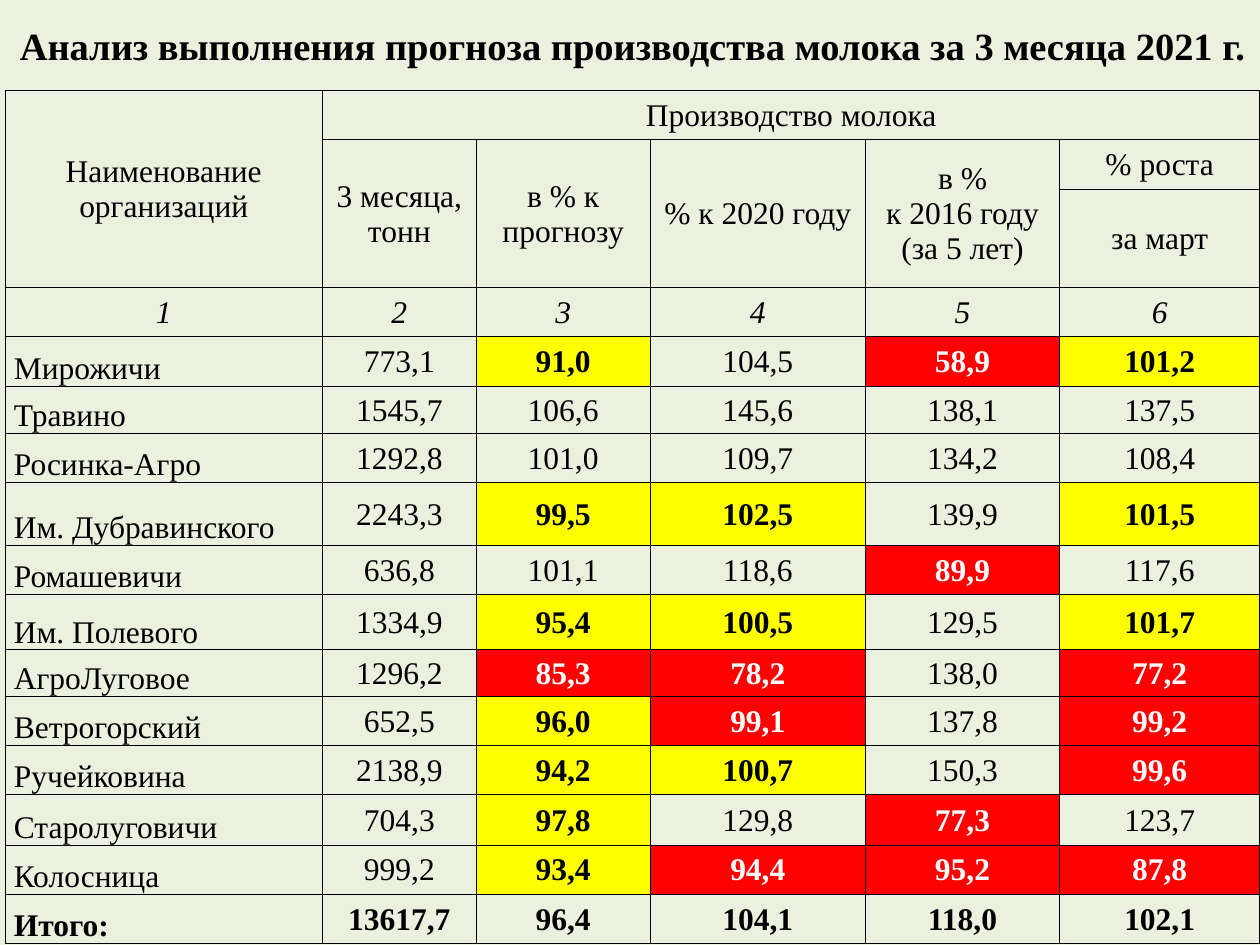
"""Build a slide with the milk production table for the first three months of 2021."""
from lxml import etree
from pptx import Presentation, util as u
from pptx.dml.color import RGBColor
from pptx.enum import text
from pptx.oxml.ns import qn

BASE, YELLOW, RED, BLACK, WHITE = "EBF1DE", "FFFF00", "FF0000", "000000", "FFFFFF"


def color(hex_value):
    return RGBColor.from_string(hex_value)


def draw_borders(cell, drawn_sides):
    properties = cell._tc.get_or_add_tcPr()
    for position, side in enumerate("LRTB"):
        line = etree.Element(qn(f"a:ln{side}"), w=str(u.Pt(0.5)))
        if side in drawn_sides:
            paint = etree.SubElement(line, qn("a:solidFill"))
            etree.SubElement(paint, qn("a:srgbClr"), val=BLACK)
        else:
            etree.SubElement(line, qn("a:noFill"))
        properties.insert(position, line)


title = "Анализ выполнения прогноза производства молока за 3 месяца 2021 г."
headings = [
    [title, "", "", "", "", ""],
    ["Наименование организаций", "Производство молока", "", "", "", ""],
    ["", "3 месяца, тонн", "в % к прогнозу", "% к 2020 году",
     "в %\nк 2016 году\n(за 5 лет)", "% роста"],
    ["", "", "", "", "", "за март"],
    ["1", "2", "3", "4", "5", "6"],
]
farms = [
    ["Мирожичи", "773,1", "91,0", "104,5", "58,9", "101,2"],
    ["Травино", "1545,7", "106,6", "145,6", "138,1", "137,5"],
    ["Росинка-Агро", "1292,8", "101,0", "109,7", "134,2", "108,4"],
    ["Им. Дубравинского", "2243,3", "99,5", "102,5", "139,9", "101,5"],
    ["Ромашевичи", "636,8", "101,1", "118,6", "89,9", "117,6"],
    ["Им. Полевого", "1334,9", "95,4", "100,5", "129,5", "101,7"],
    ["АгроЛуговое", "1296,2", "85,3", "78,2", "138,0", "77,2"],
    ["Ветрогорский", "652,5", "96,0", "99,1", "137,8", "99,2"],
    ["Ручейковина", "2138,9", "94,2", "100,7", "150,3", "99,6"],
    ["Старолуговичи", "704,3", "97,8", "129,8", "77,3", "123,7"],
    ["Колосница", "999,2", "93,4", "94,4", "95,2", "87,8"],
]
totals = ["Итого:", "13617,7", "96,4", "104,1", "118,0", "102,1"]
rows = headings + farms + [totals]
number_row, first_farm, total_row = len(headings) - 1, len(headings), len(rows) - 1

column_widths = [2.52, 1.22, 1.38, 1.71, 1.54, 1.59]
row_heights = [0.72, 0.39, 0.39, 0.78, 0.39, 0.4, 0.37, 0.39, 0.5,
               0.39, 0.44, 0.37, 0.39, 0.39, 0.4, 0.39, 0.39]
merges = [(0, 0, 0, 5), (1, 0, 3, 0), (1, 1, 1, 5)]
merges += [(2, column, 3, column) for column in range(1, 5)]
limits = {2: (90, 100), 3: (100, 103), 4: (100, 100), 5: (100, 103)}

deck = Presentation()
deck.slide_width, deck.slide_height = u.Inches(10), u.Inches(7.5)
slide = deck.slides.add_slide(deck.slide_layouts[6])
slide.background.fill.solid()
slide.background.fill.fore_color.rgb = color(BASE)

milk = slide.shapes.add_table(
    len(rows), len(column_widths), u.Inches(0.04), u.Inches(0),
    u.Inches(sum(column_widths)), u.Inches(sum(row_heights))).table
milk.first_row = milk.horz_banding = False
for column, width in zip(milk.columns, column_widths):
    column.width = u.Inches(width)
for row, height in zip(milk.rows, row_heights):
    row.height = u.Inches(height)
for top, left, bottom, right in merges:
    milk.cell(top, left).merge(milk.cell(bottom, right))

for r, values in enumerate(rows):
    for c, value in enumerate(values):
        cell = milk.cell(r, c)
        is_name = c == 0 and r >= first_farm
        fill = BASE
        if first_farm <= r < total_row and c in limits:
            percent = float(value.replace(",", "."))
            red_below, yellow_below = limits[c]
            if percent < red_below:
                fill = RED
            elif percent < yellow_below:
                fill = YELLOW

        cell.fill.solid()
        cell.fill.fore_color.rgb = color(fill)
        draw_borders(cell, "LRTB" if r else "B")
        cell.margin_left = u.Inches(0.07 if is_name else 0.01)
        cell.margin_right = cell.margin_top = u.Inches(0.01)
        cell.margin_bottom = u.Inches(0 if r else 0.17)
        at_bottom = is_name or r == 0
        cell.vertical_anchor = text.MSO_ANCHOR.BOTTOM if at_bottom else text.MSO_ANCHOR.MIDDLE

        cell.text = value
        for paragraph in cell.text_frame.paragraphs:
            paragraph.alignment = text.PP_ALIGN.LEFT if is_name else text.PP_ALIGN.CENTER
            paragraph.font.name = "Times New Roman"
            paragraph.font.size = u.Pt(18 if r else 22)
            paragraph.font.bold = r in (0, total_row) or fill != BASE
            paragraph.font.italic = r == number_row
            paragraph.font.color.rgb = color(WHITE if fill == RED else BLACK)

deck.save("out.pptx")
